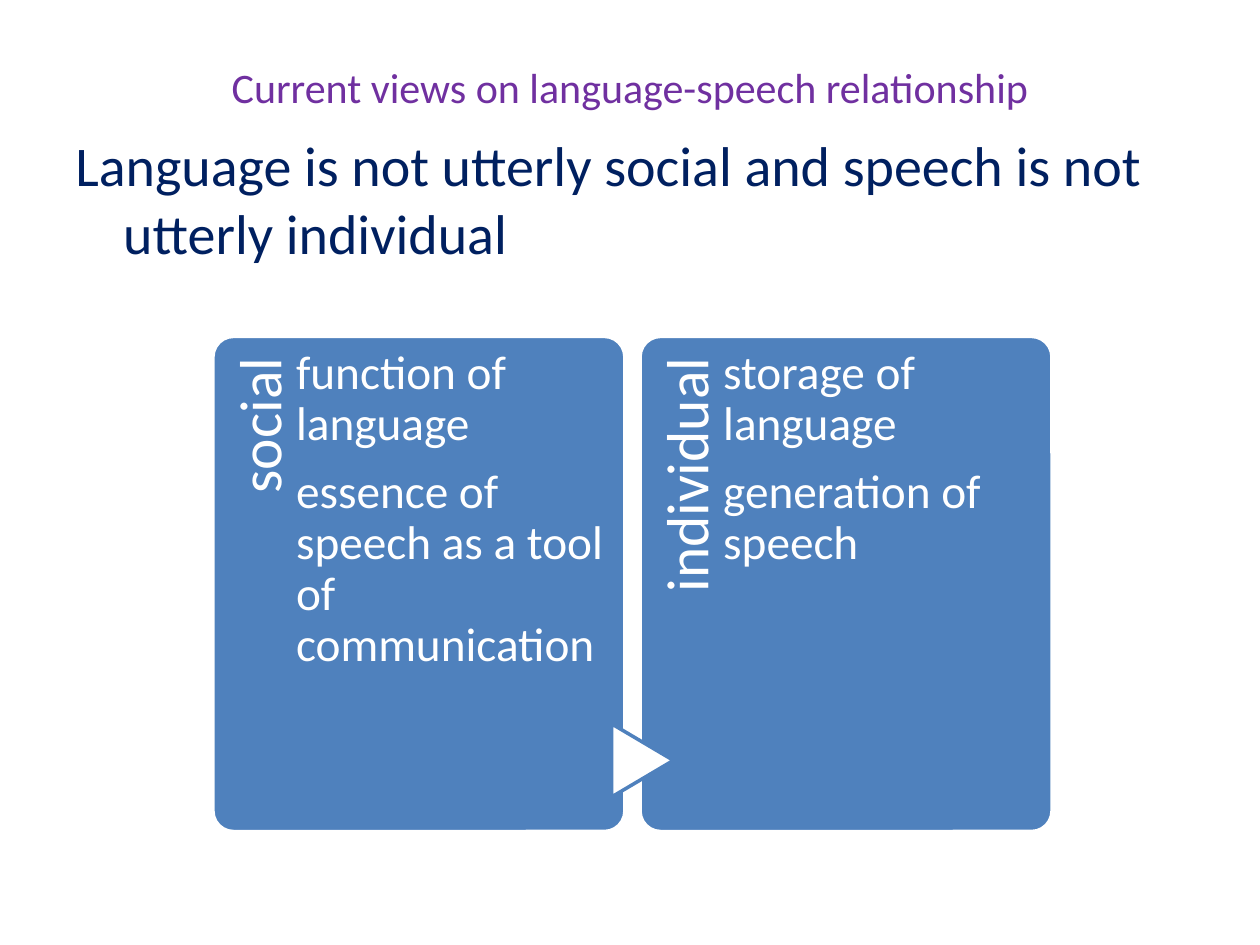
from dataclasses import dataclass

from pptx import Presentation
from pptx.dml.color import RGBColor
from pptx.enum.shapes import MSO_SHAPE as Shape
from pptx.enum.text import MSO_ANCHOR as Anchor, PP_ALIGN as Align
from pptx.util import Inches, Pt

TITLE = "Current views on language-speech relationship"
STATEMENT = "Language is not utterly social and speech is not utterly individual"
PANELS = [
    ("social", ["function of language", "essence of speech as a tool of communication"]),
    ("individual", ["storage of language", "generation of speech"]),
]


@dataclass(frozen=True)
class Theme:
    font: str = "Calibri"
    purple: str = "7030A0"
    navy: str = "002060"
    blue: str = "4F81BD"
    white: str = "FFFFFF"
    title_size: int = 24
    statement_size: int = 32
    label_size: int = 34
    point_size: int = 27
    outline: int = 2


THEME = Theme()
PANEL_LEFT, PANEL_TOP, PANEL_STEP = 1.69, 2.67, 3.39
PANEL_WIDTH, PANEL_HEIGHT = 3.27, 3.93
LABEL_LENGTH, LABEL_HEIGHT = 3.22, 0.65
POINTS_OFFSET, POINTS_WIDTH = 0.66, 2.44
ARROW_WIDTH, ARROW_HEIGHT, ARROW_TOP = 0.58, 0.49, 5.79
HANGING = 0.38


def write(frame, paragraphs, size, color, align=Align.LEFT, margins=None):
    frame.word_wrap = True
    if margins:
        (frame.margin_left, frame.margin_top,
         frame.margin_right, frame.margin_bottom) = map(Inches, margins)
    for i, wording in enumerate(paragraphs):
        paragraph = frame.add_paragraph() if i else frame.paragraphs[0]
        paragraph.text = wording
        paragraph.alignment = align
        paragraph.font.name = THEME.font
        paragraph.font.size = Pt(size)
        paragraph.font.color.rgb = RGBColor.from_string(color)
    return frame.paragraphs


def add_textbox(slide, left, top, width, height):
    return slide.shapes.add_textbox(*map(Inches, (left, top, width, height)))


def add_outlined(slide, kind, box, fill, line):
    outlined = slide.shapes.add_shape(kind, *map(Inches, box))
    outlined.shadow.inherit = False
    outlined.fill.solid()
    outlined.fill.fore_color.rgb = RGBColor.from_string(fill)
    outlined.line.color.rgb = RGBColor.from_string(line)
    outlined.line.width = Pt(THEME.outline)
    return outlined


def add_panel(slide, left, label, points):
    panel = add_outlined(slide, Shape.ROUNDED_RECTANGLE,
                         (left, PANEL_TOP, PANEL_WIDTH, PANEL_HEIGHT),
                         THEME.blue, THEME.white)
    panel.adjustments[0] = 0.05

    # The label turns about its centre, so its length runs down from the panel's top.
    label_box = add_textbox(slide, left + 0.33 - LABEL_LENGTH / 2,
                            PANEL_TOP + (LABEL_LENGTH - LABEL_HEIGHT) / 2,
                            LABEL_LENGTH, LABEL_HEIGHT)
    label_box.rotation = 270
    points_box = add_textbox(slide, left + POINTS_OFFSET, PANEL_TOP,
                             POINTS_WIDTH, PANEL_HEIGHT)
    for box, wording, size, align, margins in (
        (label_box, [label], THEME.label_size, Align.RIGHT, (0, 0.13, 0.17, 0)),
        (points_box, points, THEME.point_size, Align.LEFT, (0, 0.1, 0, 0)),
    ):
        for paragraph in write(box.text_frame, wording, size, THEME.white, align, margins):
            paragraph.line_spacing = 0.9
            paragraph.space_after = Pt(round(size * 0.35, 1))


def main():
    deck = Presentation()
    deck.slide_width, deck.slide_height = Inches(10), Inches(7.5)
    slide = deck.slides.add_slide(deck.slide_layouts[5])

    title = slide.shapes.title
    title.left, title.top, title.width, title.height = map(Inches, (0.5, 0.3, 9, 0.77))
    title.text_frame.vertical_anchor = Anchor.MIDDLE
    write(title.text_frame, [TITLE], THEME.title_size, THEME.purple, Align.CENTER)

    statement = add_textbox(slide, 0.5, 0.99, 9, 5.83)
    for paragraph in write(statement.text_frame, [STATEMENT],
                           THEME.statement_size, THEME.navy):
        properties = paragraph._p.get_or_add_pPr()
        properties.set("marL", str(Inches(HANGING)))
        properties.set("indent", str(Inches(-HANGING)))

    for i, (label, points) in enumerate(PANELS):
        add_panel(slide, PANEL_LEFT + i * PANEL_STEP, label, points)

    arrow_left = PANEL_LEFT + PANEL_STEP + 0.02 - ARROW_WIDTH / 2
    arrow = add_outlined(slide, Shape.FLOWCHART_EXTRACT,
                         (arrow_left, ARROW_TOP, ARROW_WIDTH, ARROW_HEIGHT),
                         THEME.white, THEME.blue)
    arrow.rotation = 90

    deck.save("out.pptx")


if __name__ == "__main__":
    main()
